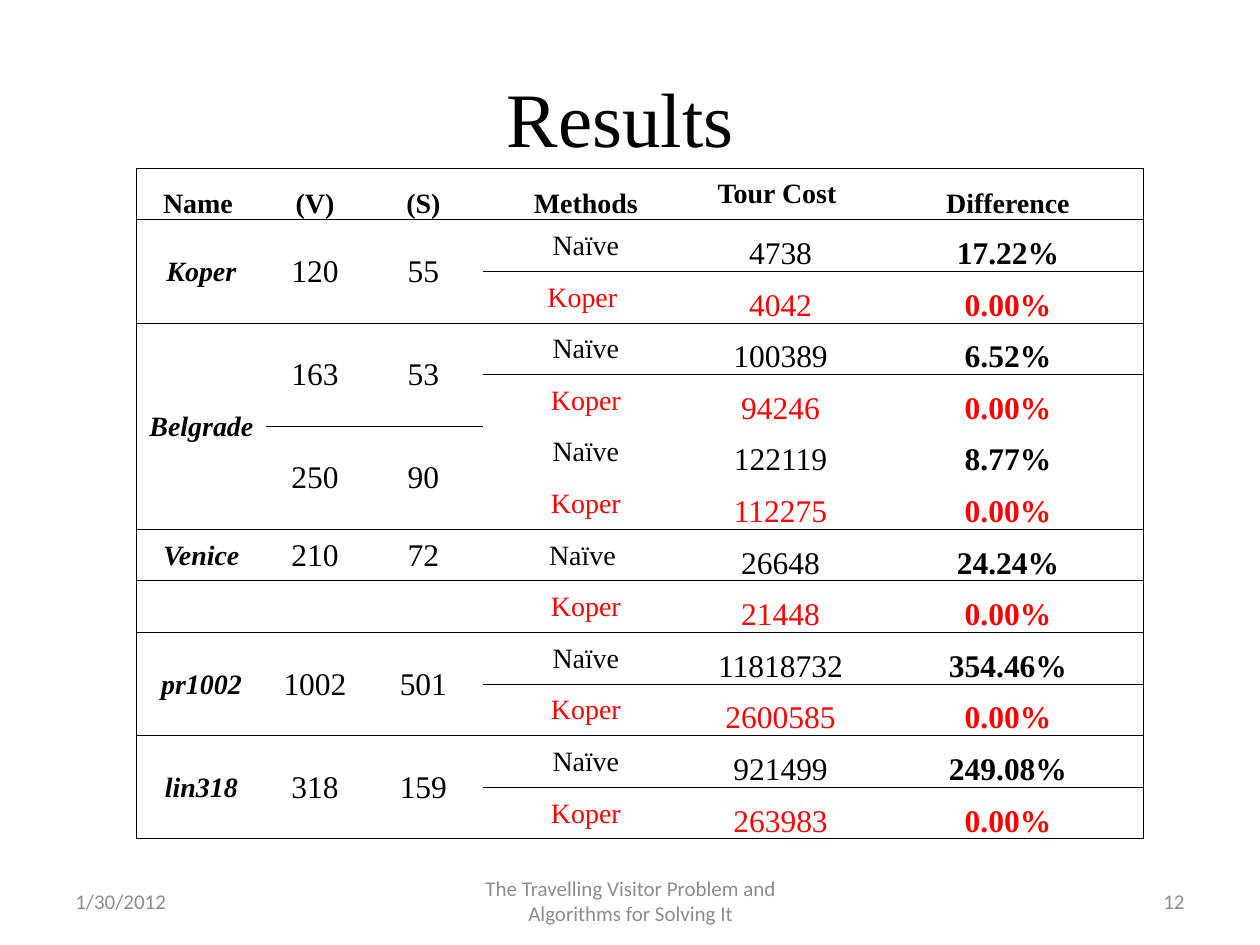
from lxml import etree
from pptx import Presentation
from pptx.dml.color import RGBColor
from pptx.enum.text import MSO_ANCHOR, PP_ALIGN
from pptx.oxml.ns import qn
from pptx.util import Cm, Pt

LEFT, MID, RIGHT = PP_ALIGN.LEFT, PP_ALIGN.CENTER, PP_ALIGN.RIGHT
CENTER, BOTTOM = MSO_ANCHOR.MIDDLE, MSO_ANCHOR.BOTTOM
PLAIN = "{2D5ABB26-0587-4C30-8999-92F81FD0307C}"  # table style without lines

BLACK, RED, GRAY = "000000", "FF0000", "8C8C8C"
SERIF, SANS = "Times New Roman", "Calibri"

WIDTHS = [2.62, 1.96, 2.41, 4.14, 3.71, 5.46]
ROW = 1.04
HEADS = ["Name ", "(V)", "(S)", "Methods", "Tour Cost ", "Difference"]

# Each group: name, then cases of V, S and two (method, cost, difference) rows
GROUPS = [
    ("Koper", [("120", "55", ("Naïve", "4738", "17.22%"),
                ("Koper ", "4042", "0.00%"))]),
    ("Belgrade", [("163", "53", ("Naïve", "100389", "6.52%"),
                   ("Koper", "94246", "0.00%")),
                  ("250", "90", ("Naïve", "122119", "8.77%"),
                   ("Koper", "112275", "0.00%"))]),
    ("Venice", [("210", "72", ("Naïve ", "26648", "24.24%"),
                 ("Koper", "21448", "0.00%"))]),
    ("pr1002", [("1002", "501", ("Naïve", "11818732", "354.46%"),
                 ("Koper", "2600585", "0.00%"))]),
    ("lin318", [("318", "159", ("Naïve", "921499", "249.08%"),
                 ("Koper", "263983", "0.00%"))]),
]
SPLIT = {"Venice"}  # groups whose label cells are not merged


def color(code):
    return RGBColor.from_string(code)


class Deck:
    def __init__(self):
        self.prs = Presentation()
        self.prs.slide_width, self.prs.slide_height = Cm(25.4), Cm(19.05)
        self.slide = self.prs.slides.add_slide(self.prs.slide_layouts[5])

    def put(self, frame, text, size, face=SERIF, tint=BLACK, align=MID,
            bold=False, italic=False):
        frame.word_wrap = True
        para = frame.paragraphs[0]
        para.text, para.alignment = text, align
        font = para.font
        font.name, font.size, font.color.rgb = face, Pt(size), color(tint)
        font.bold, font.italic = bold, italic

    def title(self, text, *box):
        shape = self.slide.shapes.title
        shape.left, shape.top, shape.width, shape.height = map(Cm, box)
        shape.text_frame.vertical_anchor = CENTER
        self.put(shape.text_frame, text, 44)

    def label(self, text, align, *box):
        frame = self.slide.shapes.add_textbox(*map(Cm, box)).text_frame
        frame.vertical_anchor = CENTER
        self.put(frame, text, 12, SANS, GRAY, align)

    def grid(self, left, top, rows):
        shape = self.slide.shapes.add_table(
            rows, len(WIDTHS), Cm(left), Cm(top),
            Cm(sum(WIDTHS)), Cm(ROW * rows))
        table = shape.table
        table.first_row = table.horz_banding = False
        table._tbl.tblPr.find(qn("a:tableStyleId")).text = PLAIN
        for col, width in zip(table.columns, WIDTHS):
            col.width = Cm(width)
        for row in table.rows:
            row.height = Cm(ROW)
        for cell in table.iter_cells():
            cell.fill.background()
            cell.margin_left = cell.margin_right = cell.margin_top = Cm(0.02)
            cell.margin_bottom = 0
        return table

    def cell(self, cell, text, size, anchor=CENTER, **look):
        cell.vertical_anchor = anchor
        self.put(cell.text_frame, text, size, **look)

    def border(self, cell, sides):
        props = cell._tc.get_or_add_tcPr()
        for spot, side in enumerate(sides):
            line = etree.Element(qn("a:ln" + side), w=str(Pt(0.5)))
            fill = etree.SubElement(line, qn("a:solidFill"))
            etree.SubElement(fill, qn("a:srgbClr"), val=BLACK)
            props.insert(spot, line)

    def frame(self, table, first, last):
        """Draw a box around a block of rows."""
        end = len(WIDTHS) - 1
        for row in range(first, last + 1):
            for col in range(end + 1):
                cell = table.cell(row, col)
                low = row + (cell.span_height if cell.is_merge_origin else 1) - 1
                tests = [("L", col == 0), ("R", col == end),
                         ("T", row == first), ("B", low == last)]
                self.border(cell, [side for side, on in tests if on])


def main():
    deck = Deck()
    deck.title("Results ", 1.27, 0.76, 22.86, 3.18)

    # Table head
    count = 1 + sum(2 * len(cases) for _, cases in GROUPS)
    table = deck.grid(2.75, 3.39, count)
    for col, head in enumerate(HEADS):
        anchor = CENTER if col == 4 else BOTTOM
        deck.cell(table.cell(0, col), head, 16, anchor, bold=True)
    deck.frame(table, 0, 0)

    # One framed block of rows per group
    row = 1
    for name, cases in GROUPS:
        first, last = row, row + 2 * len(cases) - 1
        merge = name not in SPLIT
        if merge:
            table.cell(first, 0).merge(table.cell(last, 0))
        deck.cell(table.cell(first, 0), name, 16, bold=True, italic=True)
        for *sizes, naive, koper in cases:
            for col, text in enumerate(sizes, 1):
                if merge:
                    table.cell(row, col).merge(table.cell(row + 1, col))
                deck.cell(table.cell(row, col), text, 18)
            for (way, cost, diff), tint in ((naive, BLACK), (koper, RED)):
                deck.cell(table.cell(row, 3), way, 16, tint=tint)
                deck.cell(table.cell(row, 4), cost, 18, BOTTOM, tint=tint)
                deck.cell(table.cell(row, 5), diff, 18, BOTTOM, tint=tint,
                          bold=True)
                row += 1
        deck.frame(table, first, last)

    # Footer
    deck.label("1/30/2012", LEFT, 1.27, 17.65, 5.92, 1.02)
    deck.label("The Travelling Visitor Problem and Algorithms for Solving It",
               MID, 8.69, 17.65, 8.05, 1.02)
    deck.label("12", RIGHT, 18.21, 17.65, 5.92, 1.02)

    deck.prs.save("out.pptx")


if __name__ == "__main__":
    main()
